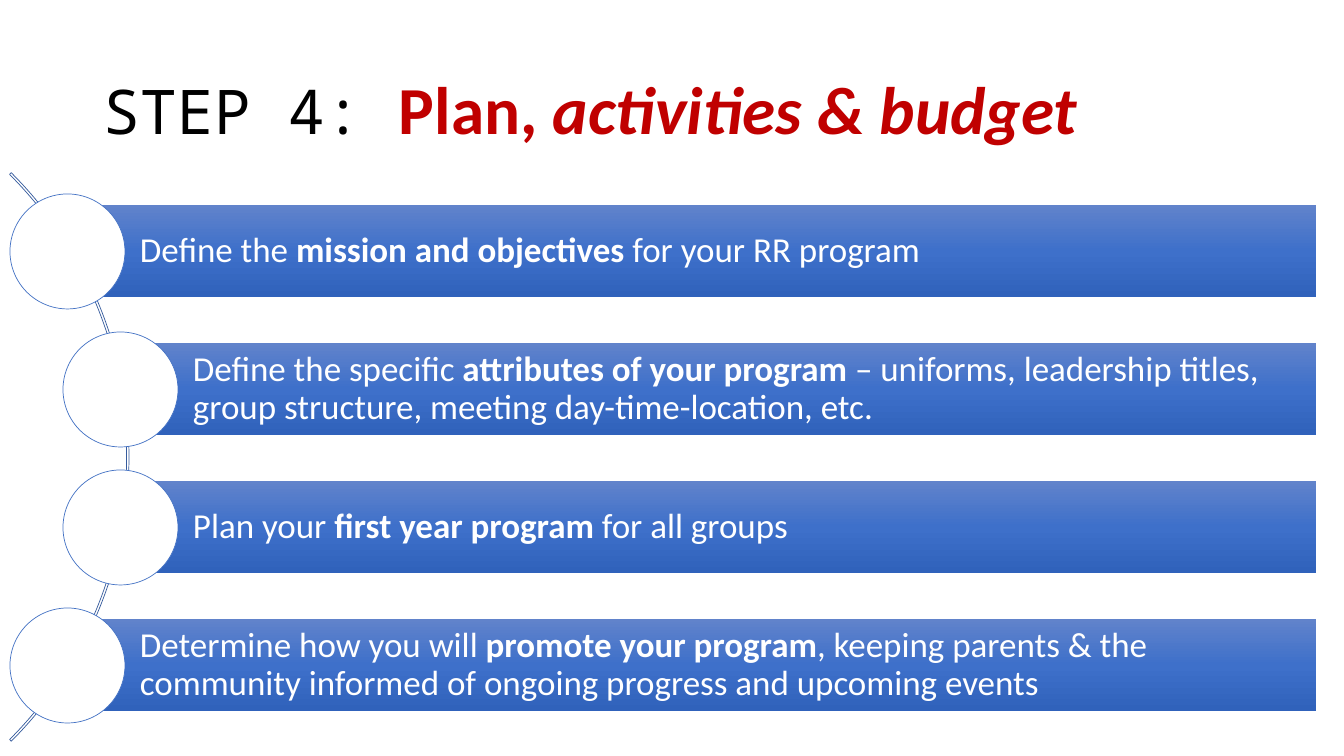
from copy import deepcopy

from pptx import Presentation
from pptx.dml.color import RGBColor
from pptx.enum.shapes import MSO_SHAPE
from pptx.enum.text import MSO_ANCHOR, MSO_AUTO_SIZE, PP_ALIGN
from pptx.oxml.ns import qn
from pptx.util import Emu, Pt

RECT, OVAL, ARC = MSO_SHAPE.RECTANGLE, MSO_SHAPE.OVAL, MSO_SHAPE.BLOCK_ARC
MIDDLE, LEFT, NO_FIT = MSO_ANCHOR.MIDDLE, PP_ALIGN.LEFT, MSO_AUTO_SIZE.NONE
TITLE_ONLY = 5

SLIDE_W, SLIDE_H = 1344, 756
BAR_TOP, BAR_H, BAR_RIGHT, STEP = 205, 92, 1316, 138
CIRCLE = 115
GRADIENT = ["6183CB", "3E70CA", "3062BB"]

BODY = {"name": "Calibri", "size": Pt(25), "bold": False}
STRONG = {**BODY, "bold": True}
LABEL = {"name": "Noto Sans Mono", "size": Pt(44), "bold": False}
HEADING = {"name": "Calibri", "size": Pt(48), "bold": True}

TITLE = [
    ("STEP 4: ", LABEL, "000000"),
    ("Plan, ", HEADING, "C00000"),
    ("activities & budget", {**HEADING, "italic": True}, "C00000"),
]
ITEMS = [
    (10, "Define the ", "mission and objectives ", "for your RR program"),
    (63, "Define the specific ", "attributes of your program",
     " – uniforms, leadership titles, group structure, meeting day-time-location, etc."),
    (63, "Plan your ", "first year program ", "for all groups"),
    (10, "Determine how you will ", "promote your program",
     ", keeping parents & the community informed of ongoing progress and upcoming events"),
]


def px(n):
    return Emu(round(n * 914400 / 100.8))


def rgb(color):
    return RGBColor.from_string(color)


def set_attrs(obj, values):
    for name, value in values.items():
        setattr(obj, name, value)


def write_runs(tf, runs, insets):
    set_attrs(tf, {"word_wrap": True, "auto_size": NO_FIT, "vertical_anchor": MIDDLE})
    sides = ("margin_left", "margin_top", "margin_right", "margin_bottom")
    set_attrs(tf, dict(zip(sides, map(px, insets))))
    p = tf.paragraphs[0]
    set_attrs(p, {"alignment": LEFT, "line_spacing": 0.9})
    for text, font, color in runs:
        r = p.add_run()
        r.text = text
        set_attrs(r.font, font)
        r.font.color.rgb = rgb(color)


def add_title(slide, runs):
    sp = slide.shapes.title
    set_attrs(sp, {"left": px(93), "top": px(40), "width": px(1159), "height": px(146)})
    write_runs(sp.text_frame, runs, (10, 5, 10, 5))


def add_shape(slide, kind, x, y, w, h, line=None):
    sp = slide.shapes.add_shape(kind, px(x), px(y), px(w), px(h))
    sp.shadow.inherit = False
    if line:
        sp.line.color.rgb = rgb(line)
        sp.line.width = Pt(0.5)
    else:
        sp.line.fill.background()
    return sp


def fill_gradient(sp, colors):
    sp.fill.gradient()
    sp.fill.gradient_angle = 270
    stops = sp._element.spPr.find(".//" + qn("a:gsLst"))
    stops.insert(1, deepcopy(stops[0]))
    last = len(colors) - 1
    for i, (stop, color) in enumerate(zip(sp.fill.gradient_stops, colors)):
        stop.position = i / last
        stop.color.rgb = rgb(color)


def add_arc(slide):
    sp = add_shape(slide, ARC, -675, 55, 804, 804, "365B9D")
    sp.fill.background()
    for i, value in enumerate((189, 27, 0.003)):
        sp.adjustments[i] = value


def add_bar(slide, x, y, runs):
    sp = add_shape(slide, RECT, x, y, BAR_RIGHT - x, BAR_H)
    fill_gradient(sp, GRADIENT)
    write_runs(sp.text_frame, runs, (73, 7, 7, 7))


def add_circle(slide, x, y):
    sp = add_shape(slide, OVAL, x, y, CIRCLE, CIRCLE, "4472C4")
    sp.fill.solid()
    sp.fill.fore_color.rgb = rgb("FFFFFF")


def main():
    prs = Presentation()
    prs.slide_width, prs.slide_height = px(SLIDE_W), px(SLIDE_H)
    slide = prs.slides.add_slide(prs.slide_layouts[TITLE_ONLY])
    add_title(slide, TITLE)
    add_arc(slide)
    for i, (x, *texts) in enumerate(ITEMS):
        y = BAR_TOP + i * STEP
        runs = [(t, font, "FFFFFF") for t, font in zip(texts, (BODY, STRONG, BODY))]
        add_bar(slide, x + CIRCLE // 2, y, runs)
        add_circle(slide, x, y - (CIRCLE - BAR_H) // 2)
    prs.save("out.pptx")


if __name__ == "__main__":
    main()
